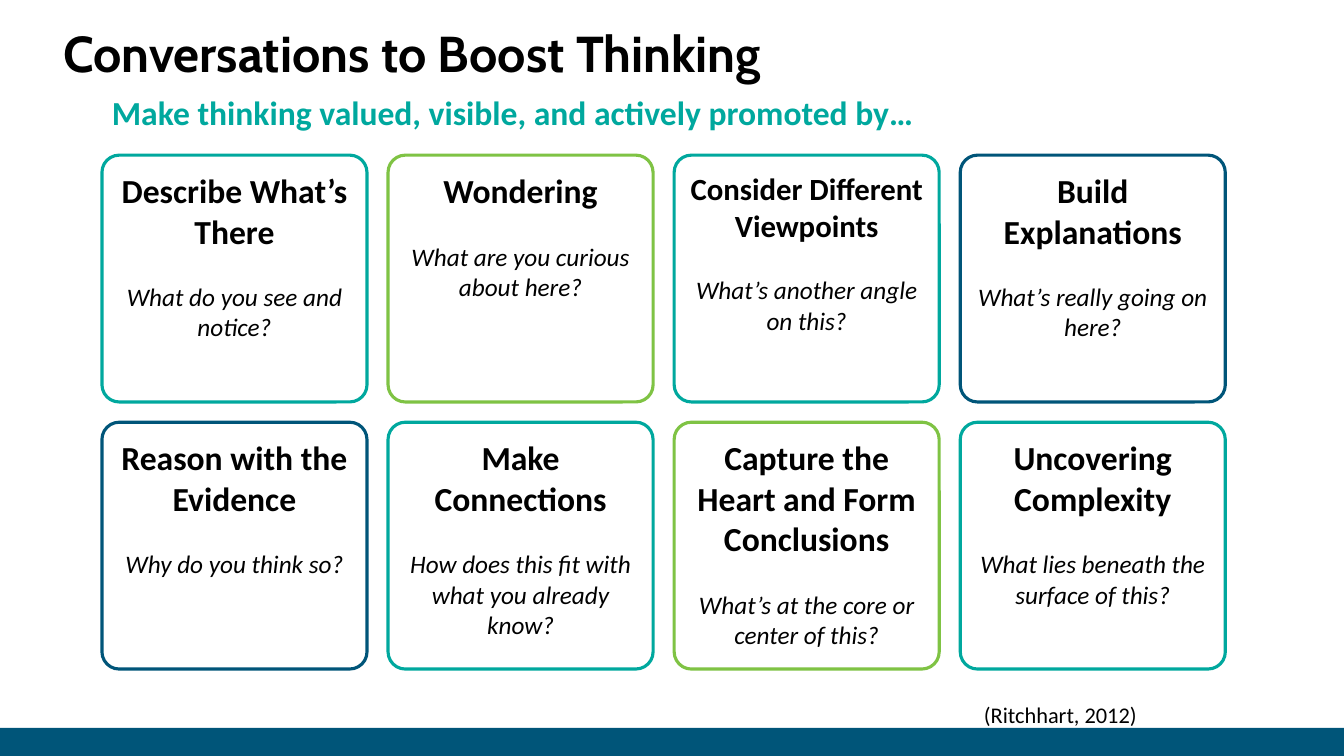
from pptx import Presentation
from pptx.dml.color import RGBColor
from pptx.enum.shapes import MSO_SHAPE
from pptx.enum.text import MSO_ANCHOR, MSO_AUTO_SIZE, PP_ALIGN
from pptx.util import Cm, Pt

RECTANGLE = MSO_SHAPE.RECTANGLE
ROUNDED = MSO_SHAPE.ROUNDED_RECTANGLE
TOP, BOTTOM = MSO_ANCHOR.TOP, MSO_ANCHOR.BOTTOM
NO_FIT = MSO_AUTO_SIZE.NONE
LEFT, CENTER, RIGHT = PP_ALIGN.LEFT, PP_ALIGN.CENTER, PP_ALIGN.RIGHT

COLORS = {"black": "000000", "teal": "00A89E", "green": "7FC344", "navy": "005579"}
HEADING_FONT, BODY_FONT = "Cabin", "Calibri"

COLUMNS = 4
CARD_LEFT, CARD_TOP = 2.57, 3.91
CARD_WIDTH, CARD_HEIGHT = 6.68, 6.22
COLUMN_STEP, ROW_STEP = 7.21, 6.73

CARDS = [
    ("Describe What’s There", "What do you see and notice?", "teal", 24),
    ("Wondering", "What are you curious about here?", "green", 24),
    ("Consider Different Viewpoints", "What’s another angle on this?", "teal", 22),
    ("Build Explanations", "What’s really going on here?", "navy", 24),
    ("Reason with the Evidence", "Why do you think so?", "navy", 24),
    ("Make Connections", "How does this fit with what you already know?", "teal", 24),
    ("Capture the Heart and Form Conclusions", "What’s at the core or center of this?", "green", 24),
    ("Uncovering Complexity", "What lies beneath the surface of this?", "teal", 24),
]


def color(name):
    return RGBColor.from_string(COLORS[name])


def set_values(target, values):
    for name, value in values.items():
        setattr(target, name, value)


class SlideBuilder:
    def __init__(self, deck):
        self.slide = deck.slides.add_slide(deck.slide_layouts[5])

    def frame(self, box, margins, anchor=TOP):
        left, top, right, bottom = map(Cm, margins)
        set_values(box.text_frame, {
            "word_wrap": True, "auto_size": NO_FIT, "vertical_anchor": anchor,
            "margin_left": left, "margin_top": top,
            "margin_right": right, "margin_bottom": bottom,
        })
        return box.text_frame

    def add_text(self, para, text, size, align=LEFT, font=BODY_FONT, ink="black", **style):
        para.alignment = align
        span = para.add_run()
        span.text = text
        set_values(span.font, {"name": font, "size": Pt(size), **style})
        span.font.color.rgb = color(ink)

    def title(self, text, left, top, width, height):
        box = self.slide.shapes.title
        set_values(box, {
            "left": Cm(left), "top": Cm(top), "width": Cm(width), "height": Cm(height)})
        para = self.frame(box, (0, 0, 0, 0), BOTTOM).paragraphs[0]
        para.line_spacing = 0.9
        self.add_text(para, text, 36, font=HEADING_FONT, bold=True)

    def label(self, text, left, top, width, height, size, **style):
        box = self.slide.shapes.add_textbox(Cm(left), Cm(top), Cm(width), Cm(height))
        frame = self.frame(box, (0.25, 0.13, 0.25, 0.13))
        self.add_text(frame.paragraphs[0], text, size, **style)

    def bar(self, left, top, width, height, fill):
        bar = self.slide.shapes.add_shape(RECTANGLE, Cm(left), Cm(top), Cm(width), Cm(height))
        bar.shadow.inherit = False
        bar.fill.solid()
        bar.fill.fore_color.rgb = color(fill)
        bar.line.fill.background()

    def card(self, left, top, heading, question, outline, size):
        card = self.slide.shapes.add_shape(
            ROUNDED, Cm(left), Cm(top), Cm(CARD_WIDTH), Cm(CARD_HEIGHT))
        card.adjustments[0] = 0.07
        card.shadow.inherit = False
        card.fill.background()
        card.line.color.rgb = color(outline)
        card.line.width = Pt(2.25)
        frame = self.frame(card, (0.25, 0.25, 0.25, 0.13))
        self.add_text(frame.paragraphs[0], heading, size, CENTER, bold=True)
        para = frame.add_paragraph()
        para.space_before = Pt(22)
        self.add_text(para, question, 18, CENTER, italic=True)


def main():
    deck = Presentation()
    set_values(deck, {"slide_width": Cm(33.87), "slide_height": Cm(19.05)})
    builder = SlideBuilder(deck)
    builder.bar(0, 18.34, 33.87, 0.71, "navy")
    builder.title("Conversations to Boost Thinking", 1.6, 0.89, 27.25, 1.22)
    builder.label("Make thinking valued, visible, and actively promoted by…",
                  2.57, 2.18, 27.25, 1.27, 24, ink="teal", bold=True)
    for index, card in enumerate(CARDS):
        row, column = divmod(index, COLUMNS)
        builder.card(CARD_LEFT + column * COLUMN_STEP, CARD_TOP + row * ROW_STEP, *card)
    builder.label("(Ritchhart, 2012)", 13.36, 17.55, 15.54, 0.94, 16, align=RIGHT)
    deck.save("out.pptx")


if __name__ == "__main__":
    main()
